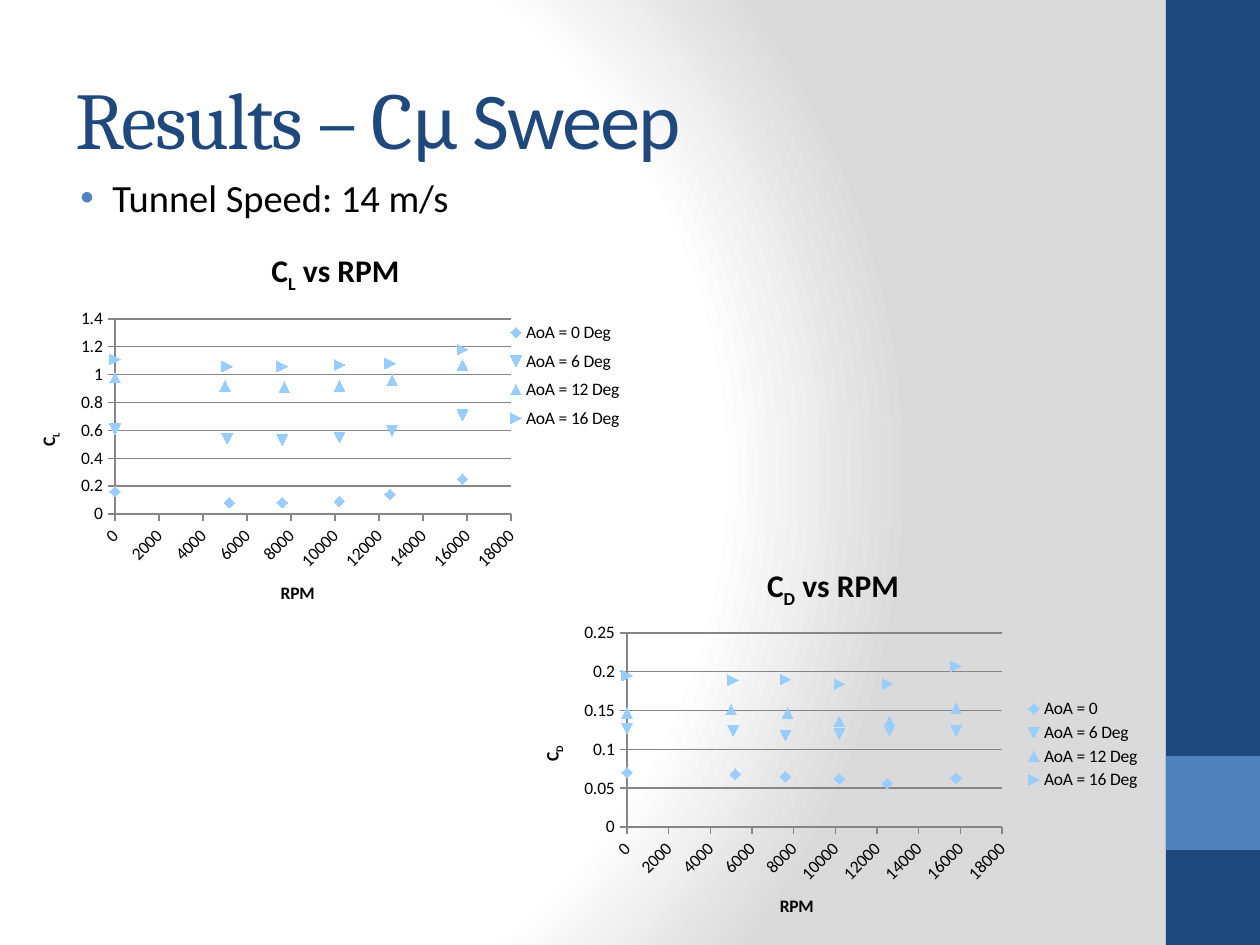
from pptx import Presentation
from pptx.chart.data import XyChartData
from pptx.dml.color import RGBColor
from pptx.enum.chart import XL_CHART_TYPE, XL_LEGEND_POSITION, XL_TICK_MARK
from pptx.enum.shapes import MSO_SHAPE
from pptx.enum.text import MSO_ANCHOR, MSO_AUTO_SIZE, PP_ALIGN
from pptx.oxml import parse_xml
from pptx.oxml.ns import nsdecls, qn
from pptx.util import Emu, Pt

SCATTER = XL_CHART_TYPE.XY_SCATTER
RIGHT = XL_LEGEND_POSITION.RIGHT
OUT, NONE = XL_TICK_MARK.OUTSIDE, XL_TICK_MARK.NONE
RECT = MSO_SHAPE.RECTANGLE
MIDDLE, LEFT = MSO_ANCHOR.MIDDLE, PP_ALIGN.LEFT
FIXED = MSO_AUTO_SIZE.NONE
PX = 914400 / 126
HUE = {"navy": "1F497D", "blue": "4F81BD", "mark": "99CCFF",
       "grid": "868686", "text": "000000", "white": "FFFFFF", "gray": "DADADA"}


def write(para, text, size, font="Calibri", hue="text", bold=False, **attrs):
    """Add a run; further keywords become attributes of its properties."""
    run = para.add_run()
    run.text = text
    run.font.size, run.font.name, run.font.bold = Pt(size), font, bold
    run.font.color.rgb = RGBColor.from_string(HUE[hue])
    for key, val in attrs.items():
        run.font._element.set(key, str(val))


def place(node, index, box, frame, inner=False):
    """Give a chart part a fixed box, as shares of the chart frame."""
    old = node.find(qn("c:layout"))
    if old is not None:
        node.remove(old)
    left, top, wide, high = box
    share = {"x": (left - frame[0]) / frame[2], "y": (top - frame[1]) / frame[3],
             "w": wide / frame[2], "h": high / frame[3]}
    body = '<c:layoutTarget val="inner"/>' if inner else ""
    body += '<c:xMode val="edge"/><c:yMode val="edge"/>'
    body += "".join(f'<c:{k} val="{v:.4f}"/>' for k, v in share.items())
    node.insert(index, parse_xml(
        f'<c:layout {nsdecls("c")}><c:manualLayout>{body}</c:manualLayout></c:layout>'))


deck = Presentation()
deck.slide_width, deck.slide_height = Emu(9144000), Emu(6858000)
slide = deck.slides.add_slide(deck.slide_layouts[5])

# Background gradient
slide.background.fill.solid()
plain = slide._element.find(".//" + qn("a:solidFill"))
stops = "".join(f'<a:gs pos="{pos}000"><a:srgbClr val="{HUE[hue]}"/></a:gs>'
                for pos, hue in ((0, "white"), (75, "white"), (100, "gray")))
plain.getparent().replace(plain, parse_xml(
    f'<a:gradFill {nsdecls("a")} rotWithShape="1"><a:gsLst>{stops}</a:gsLst>'
    '<a:path path="circle"><a:fillToRect l="20000" t="50000" r="100000" b="50000"/>'
    '</a:path></a:gradFill>'))

# Side band
for top, high, hue in ((0, 945, "navy"), (756, 119, "blue")):
    high = 945 if hue == "navy" else 94
    band = slide.shapes.add_shape(
        RECT, *(Emu(round(n * PX)) for n in (1166, top, 94, high)))
    band.shadow.inherit = False
    band.fill.solid()
    band.fill.fore_color.rgb = RGBColor.from_string(HUE[hue])
    band.line.fill.background()

# Title
title = slide.shapes.title
title.left, title.top, title.width, title.height = (
    Emu(round(n * PX)) for n in (63, 38, 1050, 158))
title.text_frame.auto_size = FIXED
title.text_frame.vertical_anchor = MIDDLE
para = title.text_frame.paragraphs[0]
para.alignment = LEFT
write(para, "Results – C", 46, "Cambria", "navy", spc=-100)
write(para, "μ Sweep", 46, hue="navy", spc=-100)

# Bullet
note = slide.shapes.add_textbox(*(Emu(round(n * PX)) for n in (53, 168, 1050, 662)))
note.text_frame.word_wrap = True
para = note.text_frame.paragraphs[0]
write(para, "Tunnel Speed: 14 m/s", 22)
props = para._p.get_or_add_pPr()
props.set("marL", str(round(47 * PX)))
props.set("indent", str(round(-32 * PX)))
for xml in ('<a:spcBef {}><a:spcPct val="20000"/></a:spcBef>',
            '<a:buClr {}><a:srgbClr val="' + HUE["blue"] + '"/></a:buClr>',
            '<a:buFont {} typeface="Arial"/>', '<a:buChar {} char="•"/>'):
    props.append(parse_xml(xml.format(nsdecls("a"))))

# Charts: sub letter, frame, plot box, legend box, y top, y step, format, series
SPEEDS = ((0, 5200, 7600, 10200, 12500, 15800), (0, 5100, 7600, 10200, 12600, 15800),
          (0, 5000, 7700, 10200, 12600, 15800), (0, 5100, 7600, 10200, 12500, 15800))
CHARTS = (
    ("L", (10, 231, 651, 399), (115, 319, 396, 195), (508, 314, 114, 123), 1.4, 0.2, "RPM ", {
        "AoA = 0 Deg": (0.16, 0.08, 0.08, 0.09, 0.14, 0.25),
        "AoA = 6 Deg": (0.61, 0.54, 0.53, 0.55, 0.6, 0.71),
        "AoA = 12 Deg": (0.98, 0.92, 0.91, 0.92, 0.96, 1.07),
        "AoA = 16 Deg": (1.11, 1.06, 1.06, 1.07, 1.08, 1.18)}),
    ("D", (514, 546, 638, 397), (627, 633, 375, 194), (1026, 695, 114, 99), 0.25, 0.05, "RPM", {
        "AoA = 0": (0.07, 0.068, 0.065, 0.062, 0.056, 0.063),
        "AoA = 6 Deg": (0.127, 0.124, 0.118, 0.12, 0.125, 0.124),
        "AoA = 12 Deg": (0.147, 0.151, 0.147, 0.136, 0.136, 0.153),
        "AoA = 16 Deg": (0.195, 0.189, 0.19, 0.184, 0.184, 0.207)}),
)
for sub, frame, plot, key, peak, step, label, rows in CHARTS:
    data = XyChartData()
    for (name, vals), speeds in zip(rows.items(), SPEEDS):
        row = data.add_series(name)
        for x, y in zip(speeds, vals):
            row.add_data_point(x, y)
    chart = slide.shapes.add_chart(
        SCATTER, *(Emu(round(n * PX)) for n in frame), data).chart
    chart.font.size, chart.font.name = Pt(10), "Calibri"
    chart.font.color.rgb = RGBColor.from_string(HUE["text"])
    chart.plots[0].vary_by_categories = False

    # Titles
    for part, size in ((chart.chart_title, 18), (chart.value_axis.axis_title, 10)):
        para = part.text_frame.paragraphs[0]
        write(para, "C", size, bold=True)
        write(para, sub, size, bold=True, baseline=-25000)
        if part is not chart.value_axis.axis_title and size == 18:
            write(para, " vs RPM", size, bold=True)
    chart.chart_title.include_in_layout = False
    turn = chart.value_axis.axis_title.text_frame._txBody.bodyPr
    turn.set("rot", "-5400000")
    turn.set("vert", "horz")
    write(chart.category_axis.axis_title.text_frame.paragraphs[0], label, 10, bold=True)

    # Axes
    for axis, top, unit in ((chart.category_axis, 18000, 2000),
                            (chart.value_axis, peak, step)):
        axis.minimum_scale, axis.maximum_scale, axis.major_unit = 0, top, unit
        axis.major_tick_mark, axis.minor_tick_mark = OUT, NONE
        axis.has_major_gridlines = axis is chart.value_axis or unit == step
        axis.tick_labels.font.size = Pt(10)
        axis.tick_labels.number_format = "General"
        axis.tick_labels.number_format_is_linked = False
        axis.format.line.color.rgb = RGBColor.from_string(HUE["grid"])
    rule = chart.value_axis.major_gridlines.format.line
    rule.color.rgb = RGBColor.from_string(HUE["grid"])
    slant = chart.category_axis._element.find(qn("c:txPr")).find(qn("a:bodyPr"))
    slant.set("rot", "-2700000")

    # Markers only
    for row in chart.plots[0].series:
        row.smooth = False
        row.format.line.fill.background()
        row.marker.size = 6
        look = row.marker.format
        look.fill.solid()
        look.fill.fore_color.rgb = RGBColor.from_string(HUE["mark"])
        look.line.fill.background()

    # Legend and plot boxes
    chart.has_legend = True
    chart.legend.position = RIGHT
    chart.legend.include_in_layout = False
    place(chart.legend._element, 1, key, frame)
    place(chart._chartSpace.chart.plotArea, 0, plot, frame, inner=True)

deck.save("out.pptx")
